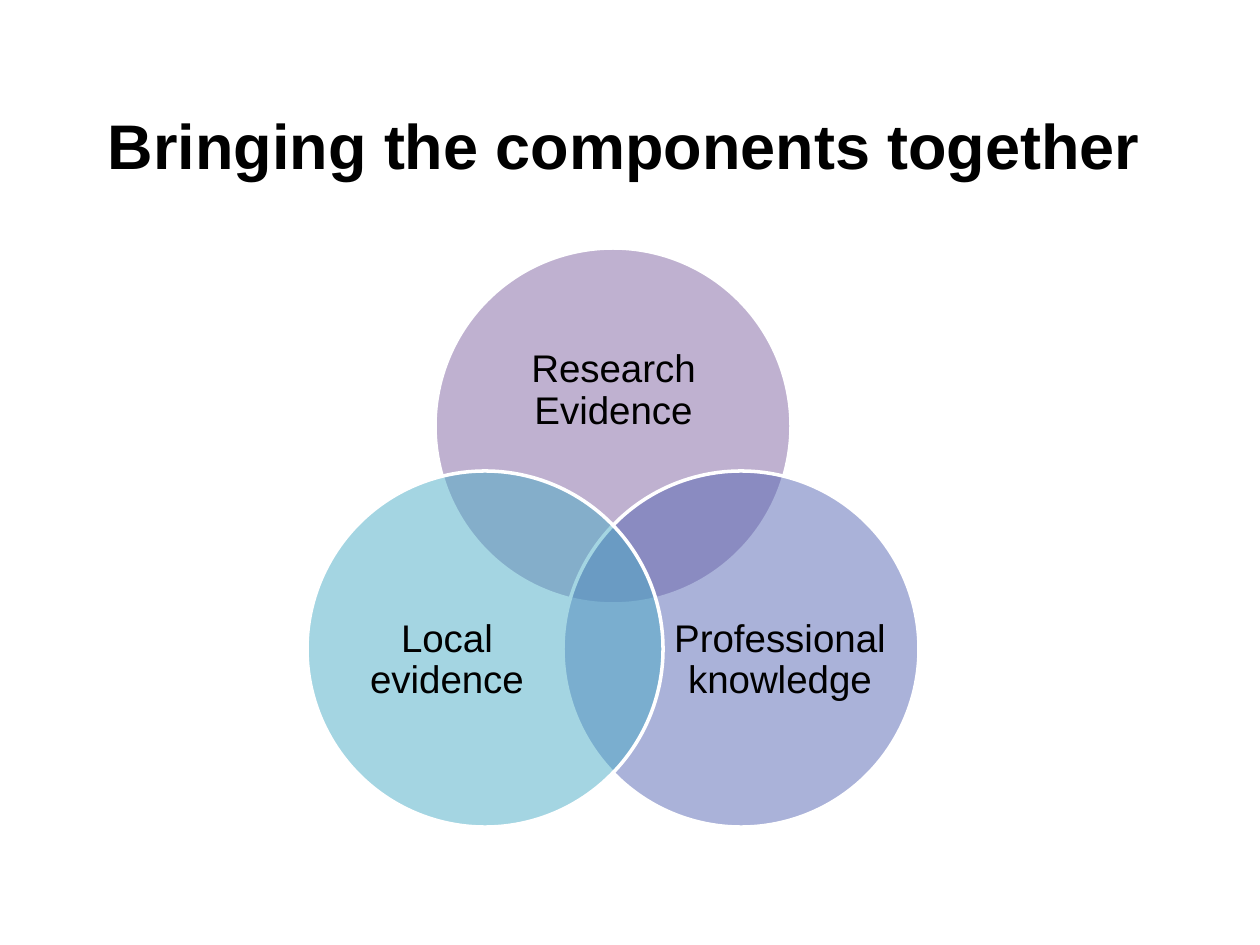
from lxml import etree
from pptx import Presentation
from pptx.dml.color import RGBColor
from pptx.enum.shapes import MSO_SHAPE
from pptx.enum.text import MSO_ANCHOR, PP_ALIGN
from pptx.oxml.ns import qn
from pptx.util import Pt

ELLIPSE = MSO_SHAPE.OVAL
LEFT, CENTER = PP_ALIGN.LEFT, PP_ALIGN.CENTER
BOTTOM, MIDDLE = MSO_ANCHOR.BOTTOM, MSO_ANCHOR.MIDDLE

EMU_PER_PX = 914400 / 126
DIAMETER = 356

# label, circle colour, circle left and top, label left, top, width and height
COMPONENTS = [
    ("Research Evidence", "8064A2", (435, 248), (483, 311, 261, 160)),
    ("Professional knowledge", "5767B4", (563, 471), (673, 563, 214, 195)),
    ("Local evidence", "4BACC6", (307, 471), (340, 563, 214, 195)),
]


def px(length):
    return round(length * EMU_PER_PX)


def color(value):
    return RGBColor.from_string(value)


def add_text(page, text, area, size, bold=False, align=CENTER, anchor=MIDDLE,
             inset=0, indent=0, line_spacing=1.0):
    box = page.shapes.add_textbox(*map(px, area))
    frame = box.text_frame
    frame.word_wrap = True
    frame.vertical_anchor = anchor
    frame.margin_left = frame.margin_right = px(inset)
    frame.margin_top = frame.margin_bottom = px(inset)
    para = frame.paragraphs[0]
    para.alignment = align
    para.line_spacing = line_spacing
    if indent:
        para._p.get_or_add_pPr().set("indent", str(px(indent)))
    span = para.add_run()
    span.text = text
    span.font.name = "Arial"
    span.font.size = Pt(size)
    span.font.bold = bold
    span.font.color.rgb = color("000000")


def add_circle(page, left, top, fill):
    """Add a half-transparent circle with a white outline."""
    circle = page.shapes.add_shape(
        ELLIPSE, px(left), px(top), px(DIAMETER), px(DIAMETER))
    circle.shadow.inherit = False
    circle.fill.solid()
    circle.fill.fore_color.rgb = color(fill)
    fill_color = circle._element.spPr.find(qn("a:solidFill"))[0]
    etree.SubElement(fill_color, qn("a:alpha")).set("val", "50000")
    circle.line.color.rgb = color("FFFFFF")
    circle.line.width = Pt(2)


def main():
    deck = Presentation()
    deck.slide_width, deck.slide_height = px(1260), px(945)
    page = deck.slides.add_slide(deck.slide_layouts[6])
    add_text(page, "Bringing the components together", (63, 38, 1134, 157), 36,
             bold=True, align=LEFT, anchor=BOTTOM, inset=13, indent=32)
    for label, fill, corner, label_area in COMPONENTS:
        add_circle(page, *corner, fill)
        add_text(page, label, label_area, 22, line_spacing=0.9)
    deck.save("out.pptx")


if __name__ == "__main__":
    main()
